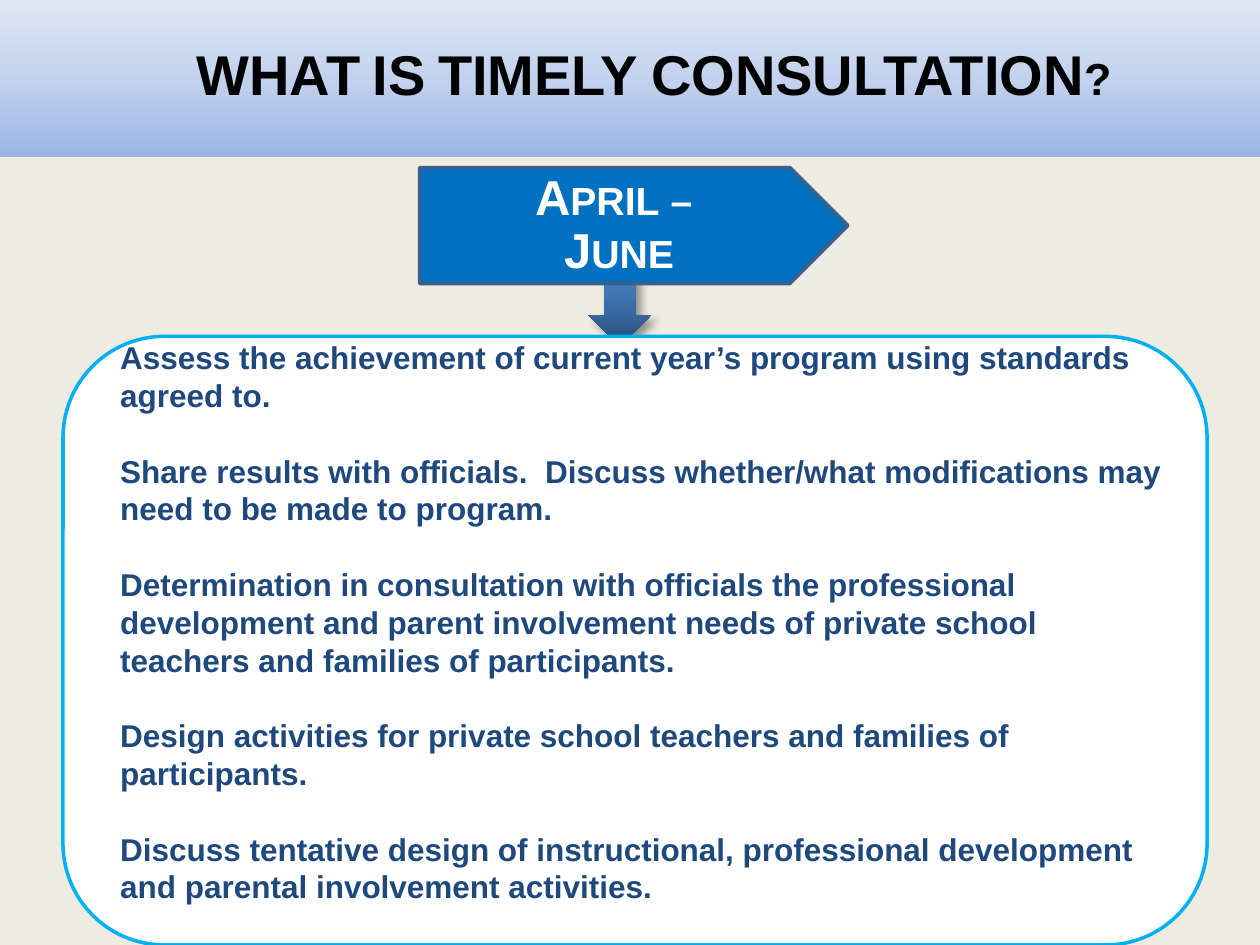
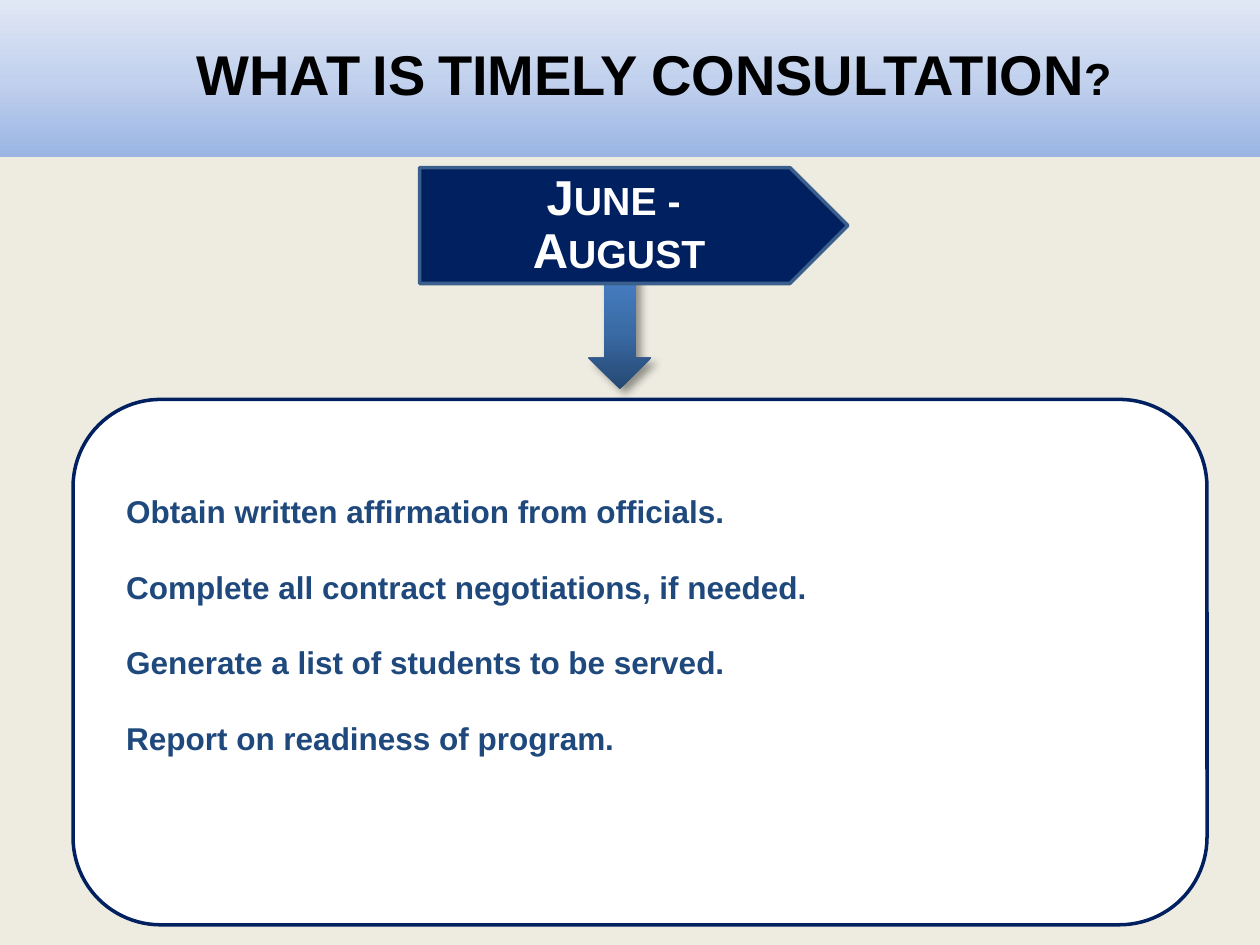
from copy import deepcopy

from lxml import etree
from pptx import Presentation
from pptx.dml.color import RGBColor
from pptx.enum.shapes import MSO_SHAPE
from pptx.enum.text import MSO_ANCHOR, MSO_AUTO_SIZE, PP_ALIGN
from pptx.oxml import parse_xml
from pptx.oxml.ns import nsdecls, qn
from pptx.util import Inches, Pt

FONT = "Arial"
BACKGROUND = "EEECE1"
BAND_STOPS = ("9AB5E4", "C2D1ED", "E1E8F5")
ARROW_STOPS = ("254872", "3A6BA5", "4780C5")
TAG_LINE = "3A5F8C"
BODY_TEXT = "1F497D"
WHITE = "FFFFFF"
BLACK = "000000"

TITLE = "WHAT IS TIMELY CONSULTATION?"
TITLE_BOX = (0, 0, 10, 1.25)
TAG_BOX = (3.33, 1.33, 3.4, 0.92)
ARROW_LEFT, ARROW_TOP, ARROW_WIDTH = 4.67, 2.17, 0.5
BODY_LINE = 21.6  # points from one line to the next

PERIODS = [
    {
        "months": ["April – ", "June"],
        "tag_fill": "0070C0",
        "panel_line": "00B0F0",
        "arrow_height": 0.58,
        "panel_box": (0.5, 2.67, 9.08, 4.83),
        "raised_lines": 1,
        "steps": [
            "Assess the achievement of current year’s program using standards agreed to.",
            "Share results with officials.  Discuss whether/what modifications may "
            "need to be made to program.",
            "Determination in consultation with officials the professional development "
            "and parent involvement needs of private school teachers and families of "
            "participants.",
            "Design activities for private school teachers and families of participants.",
            "Discuss tentative design of instructional, professional development and "
            "parental involvement activities.",
        ],
    },
    {
        "months": ["June - ", "August"],
        "tag_fill": "002060",
        "panel_line": "002060",
        "arrow_height": 0.92,
        "panel_box": (0.58, 3.17, 9, 4.17),
        "raised_lines": 2,
        "steps": [
            "Obtain written affirmation from officials.",
            "Complete all contract negotiations, if needed.",
            "Generate a list of students to be served.",
            "Report on readiness of program.",
        ],
    },
]


def color(hex_string):
    return RGBColor.from_string(hex_string)


def place(shape, box):
    shape.left, shape.top, shape.width, shape.height = map(Inches, box)


def fill_gradient(shape, stops):
    """Fill with three evenly spaced colours, running from bottom to top."""
    shape.fill.gradient()
    shape.fill.gradient_angle = 90
    stop_list = shape.element.spPr.find(".//" + qn("a:gsLst"))
    stop_list.insert(1, deepcopy(stop_list[0]))
    for index, (stop, hex_string) in enumerate(zip(shape.fill.gradient_stops, stops)):
        stop.position = index / 2
        stop.color.rgb = color(hex_string)


def add_shadow(shape):
    effects = shape.element.spPr.find(qn("a:effectLst"))
    shadow = parse_xml(
        f'<a:outerShdw {nsdecls("a")} blurRad="{Pt(5)}" dist="{Pt(4)}" '
        'dir="2700000" algn="tl" rotWithShape="0"/>'
    )
    tint = etree.SubElement(shadow, qn("a:srgbClr"), val=BLACK)
    etree.SubElement(tint, qn("a:alpha"), val="40000")
    effects.append(shadow)


def add_panel_shape(page, kind, box, fill=None, line=None):
    shape = page.shapes.add_shape(kind, *map(Inches, box))
    shape.shadow.inherit = False
    if fill:
        shape.fill.solid()
        shape.fill.fore_color.rgb = color(fill)
    if line:
        shape.line.color.rgb = color(line)
        shape.line.width = Pt(2)
    else:
        shape.line.fill.background()
    return shape


def write(shape, texts, size, hex_string, align=PP_ALIGN.CENTER, spacing=None,
          gap=0, indent=0, small_caps=False):
    """Write one paragraph per text, centred vertically in the shape."""
    frame = shape.text_frame
    frame.word_wrap = True
    frame.auto_size = MSO_AUTO_SIZE.NONE
    frame.vertical_anchor = MSO_ANCHOR.MIDDLE
    for index, text in enumerate(texts):
        para = frame.add_paragraph() if index else frame.paragraphs[0]
        para.alignment = align
        para.line_spacing = spacing
        para.space_before = Pt(gap if index else 0)
        properties = para._p.get_or_add_pPr()
        properties.set("marL", str(Inches(indent)))
        properties.set("indent", "0")
        span = para.add_run()
        span.text = text
        span.font.name = FONT
        span.font.size = Pt(size)
        span.font.bold = True
        span.font.color.rgb = color(hex_string)
        if small_caps:
            span._r.get_or_add_rPr().set("cap", "small")


def add_title_band(page):
    title = page.shapes.title
    place(title, TITLE_BOX)
    fill_gradient(title, BAND_STOPS)
    write(title, [TITLE], 32, BLACK, spacing=0.85, indent=0.38, small_caps=True)


def add_down_arrow(page, height):
    box = (ARROW_LEFT, ARROW_TOP, ARROW_WIDTH, height)
    arrow = add_panel_shape(page, MSO_SHAPE.DOWN_ARROW, box)
    fill_gradient(arrow, ARROW_STOPS)
    add_shadow(arrow)


def add_month_tag(page, months, fill):
    tag = add_panel_shape(page, MSO_SHAPE.PENTAGON, TAG_BOX, fill, TAG_LINE)
    write(tag, months, 28, WHITE, spacing=Pt(30.2), small_caps=True)


def add_steps_panel(page, box, steps, line, raised_lines):
    """Add the rounded panel; its text sits half of raised_lines above the middle."""
    panel = add_panel_shape(page, MSO_SHAPE.ROUNDED_RECTANGLE, box, WHITE, line)
    write(panel, steps, 18, BODY_TEXT, align=PP_ALIGN.LEFT,
          spacing=Pt(BODY_LINE), gap=BODY_LINE, indent=0.12)
    panel.text_frame.margin_bottom = Inches(0.05) + Pt(BODY_LINE * raised_lines)


def add_period_page(deck, period):
    page = deck.slides.add_slide(deck.slide_layouts.get_by_name("Title Only"))
    add_title_band(page)
    add_down_arrow(page, period["arrow_height"])
    add_month_tag(page, period["months"], period["tag_fill"])
    add_steps_panel(page, period["panel_box"], period["steps"],
                    period["panel_line"], period["raised_lines"])


def main():
    deck = Presentation()
    deck.slide_width, deck.slide_height = Inches(10), Inches(7.5)
    background = deck.slide_master.background.fill
    background.solid()
    background.fore_color.rgb = color(BACKGROUND)
    for period in PERIODS:
        add_period_page(deck, period)
    deck.save("out.pptx")


if __name__ == "__main__":
    main()
